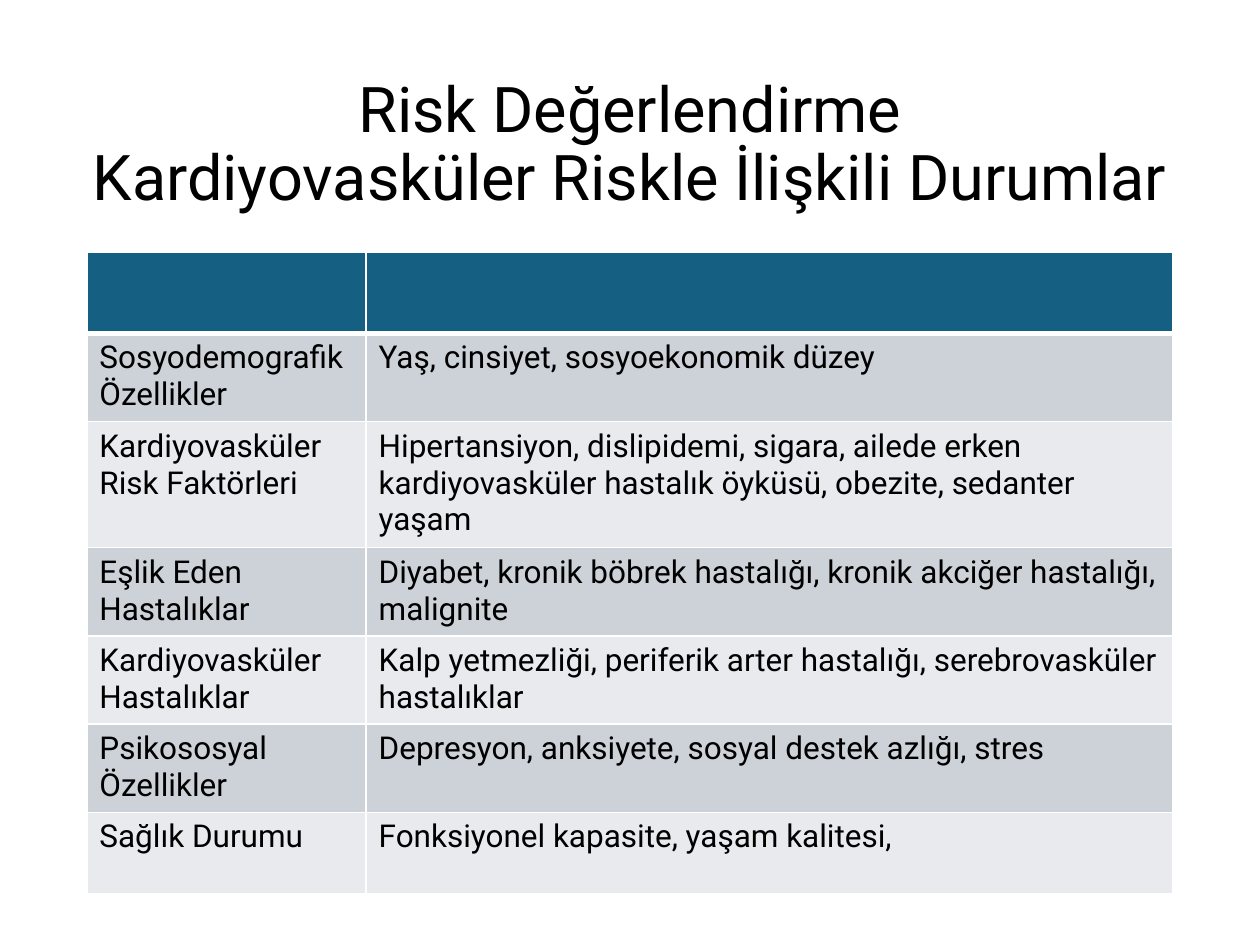
from lxml import etree
from pptx import Presentation
from pptx.dml.color import RGBColor
from pptx.enum.text import MSO_ANCHOR, PP_ALIGN
from pptx.oxml.ns import qn
from pptx.util import Cm, Pt

CENTER = PP_ALIGN.CENTER
MIDDLE = MSO_ANCHOR.MIDDLE
FONT = "Roboto"
HEX = {
    "text": "000000",
    "line": "FFFFFF",
    "head": "156082",
    "dark": "CCD2D8",
    "light": "E8EAED",
}
TITLE = "Risk Değerlendirme\vKardiyovasküler Riskle İlişkili Durumlar"
ROWS = [
    ("", ""),
    ("Sosyodemografik Özellikler", "Yaş, cinsiyet, sosyoekonomik düzey"),
    ("Kardiyovasküler Risk Faktörleri",
     "Hipertansiyon, dislipidemi, sigara, ailede erken kardiyovasküler "
     "hastalık öyküsü, obezite, sedanter yaşam"),
    ("Eşlik Eden Hastalıklar",
     "Diyabet, kronik böbrek hastalığı, kronik akciğer hastalığı, malignite"),
    ("Kardiyovasküler Hastalıklar",
     "Kalp yetmezliği, periferik arter hastalığı, serebrovasküler hastalıklar"),
    ("Psikososyal Özellikler",
     "Depresyon, anksiyete, sosyal destek azlığı, stres"),
    ("Sağlık Durumu", "Fonksiyonel kapasite, yaşam kalitesi,"),
]
WIDTHS = (Cm(5.63), Cm(16.27))
HEIGHT = Cm(1.64)


def style(para, size):
    for run in para.runs:
        run.font.name = FONT
        run.font.size = Pt(size)
        run.font.bold = False
        run.font.color.rgb = RGBColor.from_string(HEX["text"])


def add_title(slide):
    box = slide.shapes.add_textbox(Cm(1.27), Cm(1.96), Cm(22.86), Cm(1.98))
    frame = box.text_frame
    frame.word_wrap = True
    frame.vertical_anchor = MIDDLE
    frame.text = TITLE
    para = frame.paragraphs[0]
    para.alignment = CENTER
    para.line_spacing = 0.9
    style(para, 36)


def add_edge(cell, side, width):
    edge = etree.SubElement(cell._tc.get_or_add_tcPr(), qn("a:ln" + side))
    edge.set("w", str(Pt(width)))
    fill = etree.SubElement(edge, qn("a:solidFill"))
    etree.SubElement(fill, qn("a:srgbClr")).set("val", HEX["line"])


def fill_cell(cell, row, text):
    thick = {(0, "B"), (1, "T")}
    for side in "LRTB":
        add_edge(cell, side, 3 if (row, side) in thick else 1)
    tone = "head" if row == 0 else "dark" if row % 2 else "light"
    cell.fill.solid()
    cell.fill.fore_color.rgb = RGBColor.from_string(HEX[tone])
    if text:
        cell.text_frame.text = text
        style(cell.text_frame.paragraphs[0], 18)


def add_grid(slide):
    frame = slide.shapes.add_table(
        len(ROWS), len(WIDTHS), Cm(1.75), Cm(5.08),
        sum(WIDTHS), HEIGHT * len(ROWS))
    table = frame.table
    for col, width in zip(table.columns, WIDTHS):
        col.width = width
    for r, texts in enumerate(ROWS):
        table.rows[r].height = HEIGHT
        for c, text in enumerate(texts):
            fill_cell(table.cell(r, c), r, text)


def main():
    deck = Presentation()
    deck.slide_width = Cm(25.4)
    deck.slide_height = Cm(19.05)
    slide = deck.slides.add_slide(deck.slide_layouts[6])
    add_title(slide)
    add_grid(slide)
    deck.save("out.pptx")


if __name__ == "__main__":
    main()
